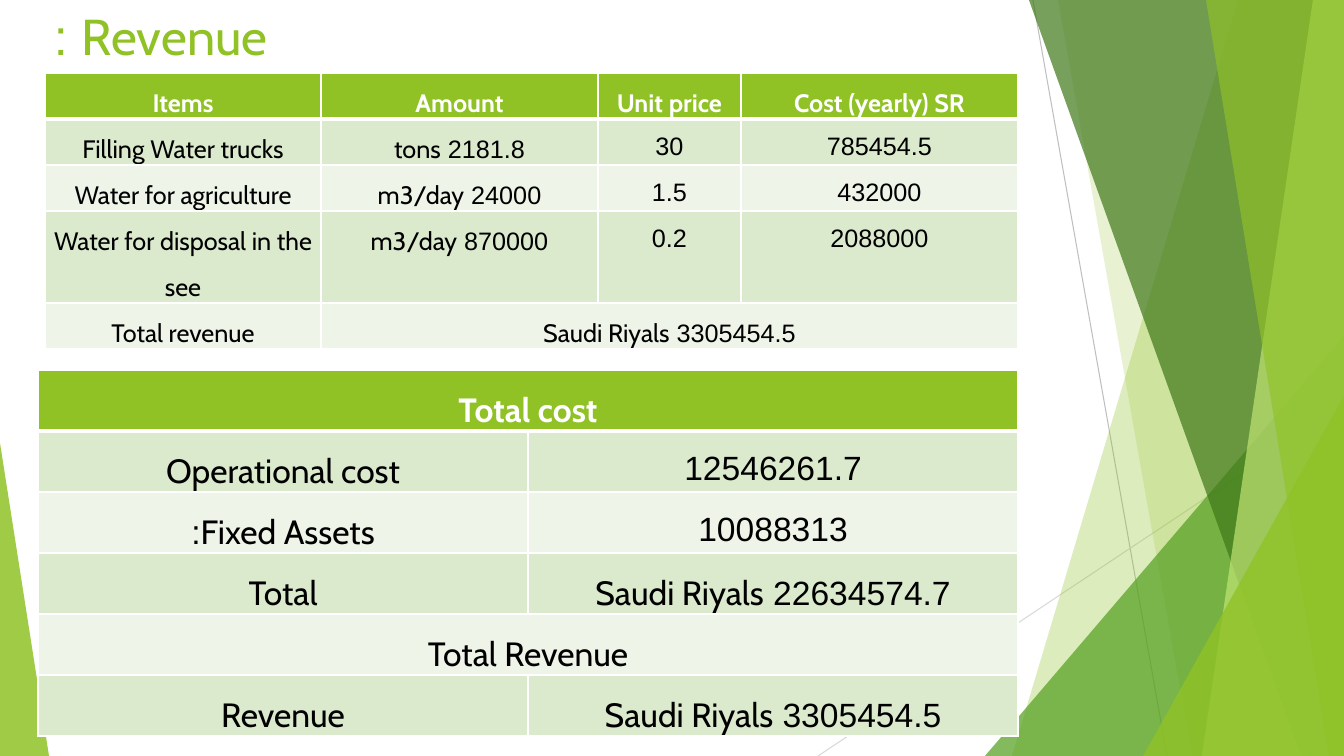
from lxml.etree import SubElement
from pptx import Presentation
from pptx.dml.color import RGBColor
from pptx.enum.shapes import MSO_CONNECTOR, MSO_SHAPE
from pptx.enum.text import MSO_ANCHOR, PP_ALIGN
from pptx.oxml.ns import qn
from pptx.util import Emu, Pt

TRIANGLE = MSO_SHAPE.ISOSCELES_TRIANGLE
STRAIGHT = MSO_CONNECTOR.STRAIGHT
LEFT, CENTER = PP_ALIGN.LEFT, PP_ALIGN.CENTER
TOP = MSO_ANCHOR.TOP
PAGE_WIDTH, PAGE_HEIGHT = 1344, 756
COLORS = {
    "lime": "90C226", "green": "54A021", "forest": "3F7819", "pale": "C0E474",
    "gray": "BFBFBF", "silver": "D9D9D9", "white": "FFFFFF", "black": "000000",
    "band_dark": "DBE9CD", "band_light": "EEF4E8",
}
REVENUE_ROWS = [
    ["Items", "Amount", "Unit price", "Cost (yearly) SR"],
    ["Filling Water trucks", "2181.8 tons", "30", "785454.5"],
    ["Water for agriculture", "24000 m3/day", "1.5", "432000"],
    ["Water for disposal in the see", "870000 m3/day", "0.2", "2088000"],
    ["Total revenue", "3305454.5 Saudi Riyals"],
]
TOTAL_ROWS = [
    ["Total cost"],
    ["Operational cost", "12546261.7"],
    ["Fixed Assets:", "10088313"],
    ["Total", "22634574.7 Saudi Riyals"],
    ["Total Revenue"],
    ["Revenue", "3305454.5 Saudi Riyals"],
]


def px(length):
    return Emu(round(length * 914400 / 100.8))


def rgb(name):
    return RGBColor.from_string(COLORS[name])


def apply(target, values):
    for name, value in values.items():
        setattr(target, name, value)


def paint(shape, color, opacity):
    shape.shadow.inherit = False
    shape.fill.solid()
    shape.fill.fore_color.rgb = rgb(color)
    shape.line.fill.background()
    tint = shape._element.spPr.find(".//" + qn("a:srgbClr"))
    SubElement(tint, qn("a:alpha"), val=str(opacity * 1000))


def write(para, text, color, size, align, bold=False, spacing=1.0):
    apply(para, {"alignment": align, "line_spacing": spacing})
    para._p.get_or_add_pPr().set("rtl", "1")
    span = para.add_run()
    span.text = text
    apply(span.font, {"name": "Cabin", "size": Pt(size), "bold": bold})
    span.font.color.rgb = rgb(color)
    SubElement(span._r.get_or_add_rPr(), qn("a:cs"), typeface="Arial")


def add_rule(page, start, end, color):
    rule = page.shapes.add_connector(STRAIGHT, *map(px, start + end))
    rule.line.color.rgb = rgb(color)
    rule.line.width = Pt(0.75)
    SubElement(rule._element.spPr, qn("a:effectLst"))


def add_shard(page, box, top_x, bottom_x, color, opacity):
    left, top, width, height = box
    right, bottom = left + width, top + height
    builder = page.shapes.build_freeform(px(top_x), px(top))
    corners = [(right, top), (right, bottom), (bottom_x, bottom)]
    builder.add_line_segments([(px(x), px(y)) for x, y in corners], close=True)
    paint(builder.convert_to_shape(), color, opacity)


def add_corner(page, box, apex, color, opacity):
    corner = page.shapes.add_shape(TRIANGLE, *map(px, box))
    corner.adjustments[0] = apex
    paint(corner, color, opacity)


def add_backdrop(page, box):
    left, top, width, height = box
    right, bottom = left + width, top + height

    def add_right_corner(x, y, color, opacity):
        add_corner(page, (x, y, right - x, bottom - y), 1, color, opacity)

    add_rule(page, (left + 1033, top), (left + 1167, bottom), "gray")
    add_rule(page, (right, top + 406), (left + 818, bottom), "silver")
    add_shard(page, box, left + 1238, left + 1012, "lime", 30)
    add_shard(page, box, left + 1058, left + 1192, "lime", 20)
    add_right_corner(left + 985, top + 336, "green", 72)
    add_shard(page, box, left + 1029, left + 1301, "forest", 70)
    add_shard(page, box, left + 1313, left + 1202, "pale", 70)
    add_shard(page, box, left + 1206, left + 1329, "lime", 65)
    add_right_corner(left + 1143, top + 396, "lime", 80)
    add_corner(page, (left, top + 443, 49, height - 443), 0, "lime", 85)


def add_title(page, box, text):
    frame = page.shapes.add_textbox(*map(px, box)).text_frame
    apply(frame, {"word_wrap": True, "vertical_anchor": TOP})
    write(frame.paragraphs[0], text, "lime", 36, LEFT)


def add_borders(cell, row):
    widths = {"L": 1, "R": 1, "T": 3 if row == 1 else 1, "B": 3 if row == 0 else 1}
    props = cell._tc.get_or_add_tcPr()
    for side, width in widths.items():
        edge = SubElement(props, qn("a:ln" + side), w=str(Pt(width)))
        fill = SubElement(edge, qn("a:solidFill"))
        SubElement(fill, qn("a:srgbClr"), val=COLORS["white"])


def add_grid(page, box, rows, widths, heights, size):
    grid = page.shapes.add_table(len(rows), len(widths), *map(px, box)).table
    apply(grid, {"first_row": True, "horz_banding": False})
    for column, width in zip(grid.columns, widths):
        column.width = px(width)
    for line, height in zip(grid.rows, heights):
        line.height = px(height)
    margins = {"margin_left": px(7), "margin_right": px(7),
               "margin_top": 0, "margin_bottom": 0}
    for r, texts in enumerate(rows):
        header = r == 0
        fill = "lime" if header else "band_dark" if r % 2 else "band_light"
        for c in range(len(widths)):
            cell = grid.cell(r, c)
            apply(cell, margins)
            add_borders(cell, r)
            cell.fill.solid()
            cell.fill.fore_color.rgb = rgb(fill)
        if len(texts) < len(widths):
            grid.cell(r, len(texts) - 1).merge(grid.cell(r, len(widths) - 1))
        for c, text in enumerate(texts):
            write(grid.cell(r, c).text_frame.paragraphs[0], text,
                  "white" if header else "black", size, CENTER, header, 1.5)


def main():
    deck = Presentation()
    apply(deck, {"slide_width": px(PAGE_WIDTH), "slide_height": px(PAGE_HEIGHT)})
    page = deck.slides.add_slide(deck.slide_layouts[6])
    add_backdrop(page, (0, 0, PAGE_WIDTH, PAGE_HEIGHT))
    add_title(page, (44, 0, 948, 145), "Revenue :")
    add_grid(page, (45, 73, 973, 276), REVENUE_ROWS,
             [276, 277, 143, 277], [46, 46, 46, 92, 46], 18)
    add_grid(page, (38, 370, 980, 366), TOTAL_ROWS, [490] * 2, [61] * 6, 24)
    deck.save("out.pptx")


if __name__ == "__main__":
    main()
